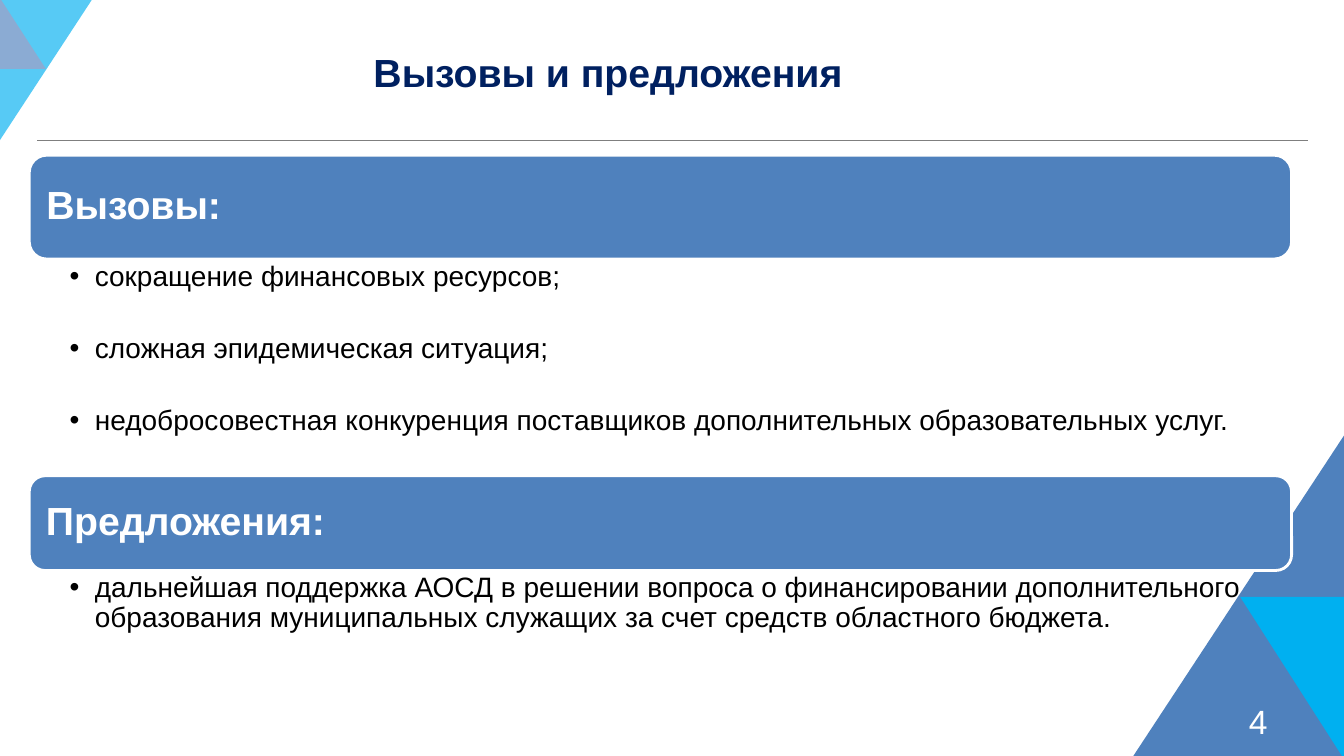
"""Build the slide on challenges and proposals."""
import pptx
import pptx.util
import pptx.dml.color
import pptx.enum.shapes
import pptx.enum.text
import pptx.oxml.ns
import lxml.etree

HEAD = "Вызовы и предложения"
PAGE = "4"
PARTS = [
    {"name": "Вызовы:", "top": 1.54, "bar": 1.03, "list": 2.13,
     "items": ["сокращение финансовых ресурсов;",
               "сложная эпидемическая ситуация;",
               "недобросовестная конкуренция поставщиков дополнительных образовательных услуг."]},
    {"name": "Предложения:", "top": 4.72, "bar": 0.94, "list": 1.18,
     "items": ["дальнейшая поддержка АОСД в решении вопроса о финансировании дополнительного "
               "образования муниципальных служащих за счет средств областного бюджета."]},
]
THEME = {"font": "Arial", "blue": "4F81BD", "sky": "00B0F0", "navy": "002060",
         "white": "FFFFFF", "black": "000000", "grey": "7F7F7F",
         "big": 28, "mid": 24, "text": 20}
WIDE, HIGH = 13.33, 7.5
LEFT, SPAN = 0.29, 12.52
TOP_TRIS = [((0, -0.03, 0.93, 1.42), 0, "sky"),
            ((-0.13, 0.1, 0.71, 0.46), 270, "blue")]
LOW_TRIS = [((11.22, 4.32, 2.11, 3.21), 180, "blue"),
            ((12.01, 6.21, 1.61, 1.03), 90, "sky")]

SHAPE = pptx.enum.shapes.MSO_SHAPE
ALIGN = pptx.enum.text.PP_ALIGN
ANCHOR = pptx.enum.text.MSO_ANCHOR
qn = pptx.oxml.ns.qn


def tint(key):
    return pptx.dml.color.RGBColor.from_string(THEME[key])


def inches(box):
    return [pptx.util.Inches(n) for n in box]


def draw(slide, kind, box, fill):
    shape = slide.shapes.add_shape(kind, *inches(box))
    shape.shadow.inherit = False
    shape.fill.solid()
    shape.fill.fore_color.rgb = tint(fill)
    shape.line.fill.background()
    return shape


def draw_tris(slide, tris):
    for box, turn, fill in tris:
        tri = draw(slide, SHAPE.RIGHT_TRIANGLE, box, fill)
        tri.rotation = turn
        tri.element.spPr.find(qn("a:xfrm")).set("flipV", "1")


def place(shape, box):
    shape.left, shape.top, shape.width, shape.height = inches(box)
    node = shape.element
    node.getparent().append(node)


def set_frame(shape, anchor, pads):
    frame = shape.text_frame
    frame.word_wrap = True
    frame.auto_size = pptx.enum.text.MSO_AUTO_SIZE.NONE
    frame.vertical_anchor = anchor
    (frame.margin_left, frame.margin_top,
     frame.margin_right, frame.margin_bottom) = inches(pads)
    return frame


def write(para, text, size, color, bold=False, align=ALIGN.LEFT):
    para.alignment = align
    run = para.add_run()
    run.text = text
    font = run.font
    font.name, font.size, font.bold = THEME["font"], pptx.util.Pt(THEME[size]), bold
    font.color.rgb = tint(color)


def add_list(shape, items):
    frame = set_frame(shape, ANCHOR.TOP, (0.4, 0.03, 0.16, 0.03))
    for i, item in enumerate(items):
        para = frame.add_paragraph() if i else frame.paragraphs[0]
        para.level = 1
        para.line_spacing = 0.9
        para.space_before = pptx.util.Pt(0)
        para.space_after = pptx.util.Pt(30)
        props = para._p.get_or_add_pPr()
        step = pptx.util.Inches(0.25)
        props.set("marL", str(step))
        props.set("indent", str(-step))
        lxml.etree.SubElement(props, qn("a:buChar")).set("char", "•")
        write(para, item, "text", "black")


def add_part(slide, body, part):
    bar = draw(slide, SHAPE.ROUNDED_RECTANGLE,
               (LEFT, part["top"], SPAN, part["bar"]), "blue")
    bar.line.color.rgb = tint("white")
    bar.line.width = pptx.util.Pt(2)
    frame = set_frame(bar, ANCHOR.MIDDLE, (0.12, 0.12, 0.12, 0.12))
    frame.paragraphs[0].line_spacing = 0.9
    write(frame.paragraphs[0], part["name"], "big", "white", True)
    place(body, (LEFT, part["top"] + part["bar"], SPAN, part["list"]))
    add_list(body, part["items"])


def main():
    deck = pptx.Presentation()
    deck.slide_width, deck.slide_height = inches((WIDE, HIGH))
    slide = deck.slides.add_slide(deck.slide_layouts[3])
    title, *bodies = list(slide.placeholders)

    draw_tris(slide, TOP_TRIS)
    veil = draw(slide, SHAPE.RECTANGLE, (0, -0.04, 1.71, 2.21), "white")
    shade = veil.element.spPr.find(".//" + qn("a:srgbClr"))
    lxml.etree.SubElement(shade, qn("a:alpha")).set("val", "34000")
    draw_tris(slide, LOW_TRIS)

    rule = slide.shapes.add_connector(pptx.enum.shapes.MSO_CONNECTOR.STRAIGHT,
                                      *inches((0.37, 1.39, 12.97, 1.39)))
    rule.line.color.rgb = tint("grey")
    rule.line.width = pptx.util.Pt(0.75)
    lxml.etree.SubElement(rule._element.spPr, qn("a:effectLst"))

    page = slide.shapes.add_textbox(*inches((9.56, 6.95, 3.11, 0.4)))
    frame = set_frame(page, ANCHOR.MIDDLE, (0.1, 0.05, 0.1, 0.05))
    write(frame.paragraphs[0], PAGE, "mid", "white", align=ALIGN.RIGHT)

    place(title, (0.67, 0.13, 10.72, 0.87))
    frame = set_frame(title, ANCHOR.BOTTOM, (0.1, 0.05, 0.1, 0.05))
    write(frame.paragraphs[0], HEAD, "big", "navy", True, ALIGN.CENTER)

    for body, part in zip(bodies, PARTS):
        add_part(slide, body, part)
    deck.save("out.pptx")


if __name__ == "__main__":
    main()
